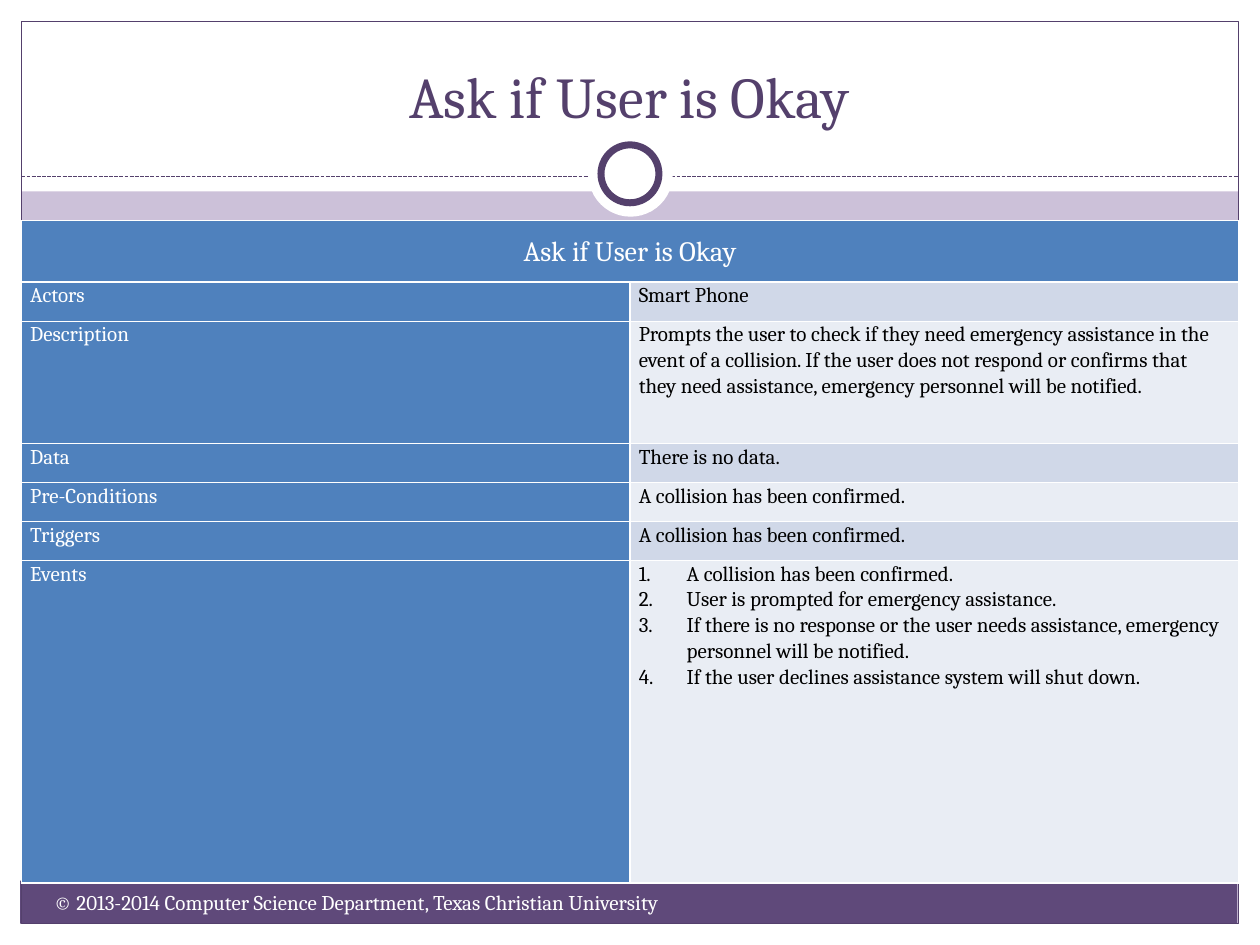
from pptx import Presentation
from pptx.dml.color import RGBColor
from pptx.enum.dml import MSO_LINE
from pptx.enum.shapes import MSO_CONNECTOR, MSO_SHAPE
from pptx.enum.text import MSO_ANCHOR, MSO_AUTO_SIZE, PP_ALIGN
from pptx.oxml.ns import qn
from pptx.util import Inches, Pt
from lxml import etree

RECTANGLE, OVAL = MSO_SHAPE.RECTANGLE, MSO_SHAPE.OVAL
STRAIGHT, DASH = MSO_CONNECTOR.STRAIGHT, MSO_LINE.SQUARE_DOT
LEFT, CENTER = PP_ALIGN.LEFT, PP_ALIGN.CENTER
TOP, MIDDLE, BOTTOM = MSO_ANCHOR.TOP, MSO_ANCHOR.MIDDLE, MSO_ANCHOR.BOTTOM

WHITE = RGBColor(0xFF, 0xFF, 0xFF)
BLACK = RGBColor(0, 0, 0)
LILAC = RGBColor(0xCC, 0xC1, 0xD9)
PURPLE = RGBColor(0x5F, 0x49, 0x7A)
DARK_PURPLE = RGBColor(0x54, 0x40, 0x6C)
BLUE = RGBColor(0x4F, 0x81, 0xBD)
BANDS = (RGBColor(0xD0, 0xD8, 0xE8), RGBColor(0xE9, 0xED, 0xF4))

TITLE = "Ask if User is Okay"
FOOTER = "© 2013-2014 Computer Science Department, Texas Christian University"
# Label, row height, paragraphs
USE_CASE = [
    ("Actors", 0.31, ["Smart Phone"]),
    ("Description", 0.97, [
        "Prompts the user to check if they need emergency assistance in the "
        "event of a collision. If the user does not respond or confirms that "
        "they need assistance, emergency personnel will be notified."]),
    ("Data", 0.31, ["There is no data."]),
    ("Pre-Conditions", 0.31, ["A collision has been confirmed."]),
    ("Triggers", 0.31, ["A collision has been confirmed."]),
    ("Events", 2.56, [
        "A collision has been confirmed.",
        "User is prompted for emergency assistance.",
        "If there is no response or the user needs assistance, emergency "
        "personnel will be notified.",
        "If the user declines assistance system will shut down."]),
]


class SlideBuilder:
    font_name = "Cambria"

    def __init__(self, presentation):
        self.slide = presentation.slides.add_slide(presentation.slide_layouts[5])
        self.shapes = self.slide.shapes

    def background(self, color):
        fill = self.slide.background.fill
        fill.solid()
        fill.fore_color.rgb = color

    def format_text(self, frame, size, color, align=LEFT, spacing=None):
        for paragraph in frame.paragraphs:
            paragraph.alignment = align
            if spacing:
                paragraph.line_spacing = spacing
            for run in paragraph.runs:
                run.font.name = self.font_name
                run.font.size = Pt(size)
                run.font.color.rgb = color

    def shape(self, kind, box, fill=None, line=None, width=0.75):
        shape = self.shapes.add_shape(kind, *map(Inches, box))
        shape.shadow.inherit = False
        if fill is None:
            shape.fill.background()
        else:
            shape.fill.solid()
            shape.fill.fore_color.rgb = fill
        if line is None:
            shape.line.fill.background()
        else:
            shape.line.color.rgb = line
            shape.line.width = Pt(width)

    def dashed_line(self, start, end, color):
        line = self.shapes.add_connector(STRAIGHT, *map(Inches, start + end))
        line.line.color.rgb = color
        line.line.width = Pt(0.75)
        line.line.dash_style = DASH
        etree.SubElement(line._element.spPr, qn("a:effectLst"))

    def title(self, text, box):
        title = self.shapes.title
        title.left, title.top, title.width, title.height = map(Inches, box)
        frame = title.text_frame
        frame.text = text
        frame.auto_size = MSO_AUTO_SIZE.NONE
        frame.vertical_anchor = BOTTOM
        self.format_text(frame, 33, DARK_PURPLE, CENTER)
        # Bring the title in front of the white panels
        title._element.getparent().append(title._element)

    def text(self, text, box, size, color):
        frame = self.shapes.add_textbox(*map(Inches, box)).text_frame
        frame.word_wrap = True
        frame.text = text
        self.format_text(frame, size, color)

    def number(self, paragraph):
        properties = paragraph._p.get_or_add_pPr()
        properties.set("marL", str(Inches(0.38)))
        properties.set("indent", str(-Inches(0.38)))
        etree.SubElement(properties, qn("a:buFont"), typeface="+mj-lt")
        etree.SubElement(properties, qn("a:buAutoNum"), type="arabicPeriod")

    def cell(self, cell, lines, fill, color, size=12, align=LEFT, anchor=TOP):
        cell.margin_left = cell.margin_right = Inches(0.07)
        cell.margin_top = cell.margin_bottom = 0
        cell.vertical_anchor = anchor
        cell.text_frame.text = "\n".join(lines)
        if len(lines) > 1:
            for paragraph in cell.text_frame.paragraphs:
                self.number(paragraph)
        self.format_text(cell.text_frame, size, color, align, 1.07)
        # Borders come before the fill in the cell properties
        properties = cell._tc.get_or_add_tcPr()
        for side in ("lnL", "lnR", "lnT", "lnB"):
            border = etree.SubElement(properties, qn("a:" + side), w=str(Pt(1)))
            solid = etree.SubElement(border, qn("a:solidFill"))
            etree.SubElement(solid, qn("a:srgbClr"), val=str(WHITE))
        cell.fill.solid()
        cell.fill.fore_color.rgb = fill

    def use_case_table(self, heading, rows, box):
        table = self.shapes.add_table(len(rows) + 1, 2, *map(Inches, box)).table
        table.rows[0].height = Inches(0.49)
        table.cell(0, 0).merge(table.cell(0, 1))
        self.cell(table.cell(0, 0), [heading], BLUE, WHITE, 16, CENTER, MIDDLE)
        for index, (label, height, lines) in enumerate(rows, 1):
            table.rows[index].height = Inches(height)
            self.cell(table.cell(index, 0), [label], BLUE, WHITE)
            self.cell(table.cell(index, 1), lines, BANDS[(index - 1) % 2], BLACK)


def main():
    presentation = Presentation()
    presentation.slide_width = Inches(10)
    presentation.slide_height = Inches(7.5)
    builder = SlideBuilder(presentation)
    builder.background(LILAC)

    # White margins and header panel
    for box in ((0, 7.33, 10, 0.17), (0, 0, 10, 1.52),
                (0, 0, 0.17, 7.5), (9.83, 0, 0.17, 7.5)):
        builder.shape(RECTANGLE, box, WHITE)

    # Footer bar, frame and header ornament
    builder.shape(RECTANGLE, (0.16, 6.99, 9.66, 0.34), PURPLE)
    builder.shape(RECTANGLE, (0.17, 0.17, 9.66, 7.16), line=DARK_PURPLE)
    builder.dashed_line((0.17, 1.4), (9.83, 1.4), DARK_PURPLE)
    builder.shape(OVAL, (4.67, 1.05, 0.67, 0.67), WHITE)
    builder.shape(OVAL, (4.77, 1.15, 0.46, 0.46), WHITE, DARK_PURPLE, 4)

    # Content
    builder.title(TITLE, (0.33, 0.25, 9.33, 0.83))
    builder.text(FOOTER, (0.33, 7.01, 5.58, 0.4), 12, WHITE)
    builder.use_case_table(TITLE, USE_CASE, (0.17, 1.75, 9.66, 5.25))
    presentation.save("out.pptx")


if __name__ == "__main__":
    main()
